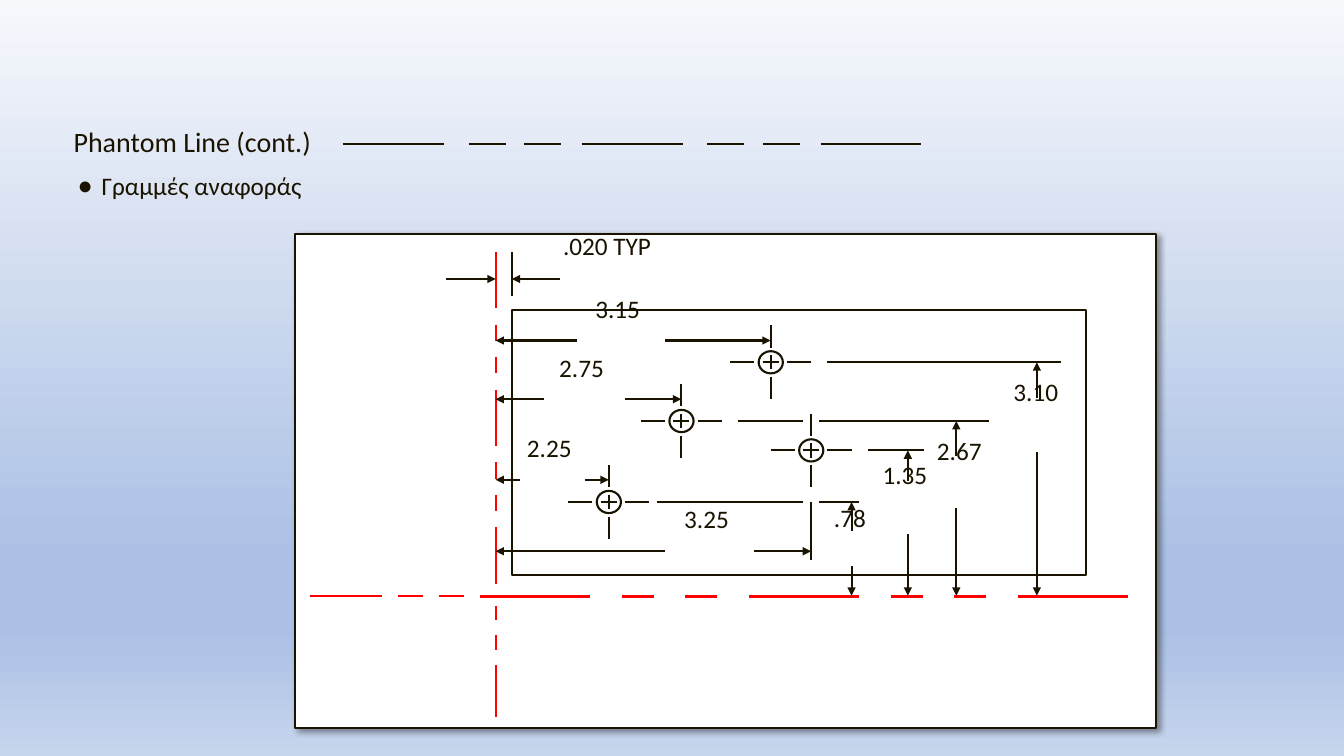
from lxml.etree import SubElement
from pptx import Presentation
from pptx.dml.color import RGBColor
from pptx.enum.shapes import MSO_CONNECTOR, MSO_SHAPE
from pptx.enum.text import MSO_ANCHOR, MSO_AUTO_SIZE, PP_ALIGN
from pptx.oxml.ns import qn
from pptx.util import Cm, Pt

INK = RGBColor(0x1A, 0x13, 0x00)
RED = RGBColor(0xFF, 0x00, 0x00)
WHITE = RGBColor(0xFF, 0xFF, 0xFF)
BLACK = RGBColor(0x00, 0x00, 0x00)
SKY = [(0, RGBColor(0xF6, 0xF8, 0xFC)), (74, RGBColor(0xAB, 0xC0, 0xE4)),
       (83, RGBColor(0xAB, 0xC0, 0xE4)), (100, RGBColor(0xC7, 0xD5, 0xED))]

FRAME = {"word_wrap": True, "auto_size": MSO_AUTO_SIZE.NONE,
         "vertical_anchor": MSO_ANCHOR.TOP}

# All boxes are left, top, width, height in centimetres on the slide.
TITLE_BOX = (1.6, 3.0, 30.63, 1.12)
BODY_BOX = (1.7, 4.24, 30.76, 13.31)
SAMPLE_BOX = (8.64, 3.63, 14.58, 0)
PANEL_BOX = (7.44, 5.89, 21.69, 12.45)

# Drawing geometry in centimetres from the panel corner.
DATUM_X, DATUM_Y = 5.05, 9.14
PART = (5.46, 1.93, 14.48, 6.68)
HOLES = [(11.98, 3.24), (9.73, 4.72), (13.0, 5.46), (7.9, 6.76)]
# y, end of left arrow's tail, start of right arrow, hole x
WIDTHS = [(2.69, 7.09, 9.32, 11.98), (4.17, 6.27, 8.31, 9.73),
          (6.2, 5.66, 7.29, 7.9), (8.0, 9.32, 11.56, 13.0)]
# x, hole y, start of upper arrow, start of lower arrow
HEIGHTS = [(18.69, 3.24, 4.14, 5.49), (16.66, 4.72, 5.59, 6.91),
           (15.44, 5.46, 6.22, 7.57), (14.02, 6.76, 7.49, 8.38)]
EXTENSIONS = [(13.41, 3.24, 19.3, 3.24), (11.15, 4.72, 12.8, 4.72),
              (13.21, 4.72, 17.48, 4.72), (14.43, 5.46, 15.85, 5.46),
              (9.12, 6.76, 12.8, 6.76), (13.21, 6.76, 14.22, 6.76),
              (13.0, 6.76, 13.0, 8.23), (5.46, 0.46, 5.46, 1.57)]
LABELS = [(".020 TYP", 6.5, -0.2, 3.33, PP_ALIGN.LEFT),
          ("3.15", 7.21, 1.37, 1.83, PP_ALIGN.CENTER),
          ("2.75", 6.3, 2.87, 1.83, PP_ALIGN.CENTER),
          ("2.25", 5.59, 4.88, 1.78, PP_ALIGN.LEFT),
          ("3.10", 17.75, 3.48, 1.83, PP_ALIGN.CENTER),
          ("2.67", 15.82, 4.95, 1.83, PP_ALIGN.CENTER),
          ("1.35", 14.45, 5.56, 1.83, PP_ALIGN.CENTER),
          ("3.25", 9.45, 6.68, 1.83, PP_ALIGN.CENTER),
          (".78", 13.23, 6.65, 1.5, PP_ALIGN.CENTER)]


def apply(target, values):
    for name, value in values.items():
        setattr(target, name, value)


def move(placeholder, box):
    apply(placeholder, dict(zip(("left", "top", "width", "height"), map(Cm, box))))


def write(frame, text, size, **paragraph_format):
    apply(frame, FRAME)
    paragraph = frame.paragraphs[0]
    paragraph.text = text
    apply(paragraph, paragraph_format)
    apply(paragraph.font, {"name": "Calibri", "size": Pt(size)})
    paragraph.font.color.rgb = INK


def add_line(shapes, origin, ends, color=INK, arrow=False):
    """Draw x1, y1, x2, y2 from the origin, with any arrowhead at the second end."""
    x, y = origin
    x1, y1, x2, y2 = ends
    stroke = shapes.add_connector(MSO_CONNECTOR.STRAIGHT, Cm(x + x1), Cm(y + y1),
                                  Cm(x + x2), Cm(y + y2))
    stroke.line.width = Pt(1.5)
    stroke.line.color.rgb = color
    if arrow:
        SubElement(stroke.line._get_or_add_ln(), qn("a:tailEnd"), type="triangle")
    SubElement(stroke.element.spPr, qn("a:effectLst"))


def add_outline(shapes, kind, box, fill=None):
    outline = shapes.add_shape(kind, *map(Cm, box))
    outline.shadow.inherit = False
    if fill is None:
        outline.fill.background()
    else:
        outline.fill.solid()
        outline.fill.fore_color.rgb = fill
    outline.line.color.rgb = INK
    outline.line.width = Pt(1.5)
    return outline


def dashes(start, lengths, gap):
    for length in lengths:
        yield start, start + length
        start += length + gap


def paint_background(slide):
    fill = slide.background.fill
    fill.gradient()
    fill.gradient_angle = 270
    stops = slide.element.find(".//" + qn("a:gsLst"))
    stops.clear()
    for percent, color in SKY:
        stop = SubElement(stops, qn("a:gs"), pos=str(percent * 1000))
        SubElement(stop, qn("a:srgbClr"), val=str(color))


def add_heading(slide, title_box, body_box):
    title, body = slide.placeholders
    move(title, title_box)
    write(title.text_frame, "Phantom Line (cont.)", 20,
          alignment=PP_ALIGN.LEFT, line_spacing=1.0)
    move(body, body_box)
    topic = body.text_frame.paragraphs[0]
    properties = topic._p.get_or_add_pPr()
    apply_indent = {"marL": str(Cm(0.61)), "indent": str(-Cm(0.61))}
    for name, value in apply_indent.items():
        properties.set(name, value)
    SubElement(properties, qn("a:buChar"), char="●")
    write(body.text_frame, "Γραμμές αναφοράς", 18, line_spacing=0.9,
          space_before=Pt(0), space_after=Pt(6))


def add_phantom_sample(shapes, box):
    period = 6.02
    pattern = [(0, 2.54), (3.17, 0.93), (4.57, 0.93)]
    strokes = [(k * period + start, length) for k in range(2) for start, length in pattern]
    for start, length in strokes + [(2 * period, 2.54)]:
        add_line(shapes, box[:2], (start, 0, start + length, 0))


def add_panel(shapes, box):
    panel = add_outline(shapes, MSO_SHAPE.RECTANGLE, box, WHITE)
    effects = panel.element.spPr.find(qn("a:effectLst"))
    shadow = SubElement(effects, qn("a:outerShdw"), blurRad=str(Pt(4)), dist=str(Pt(3)),
                        dir="2700000", algn="tl", rotWithShape="0")
    tint = SubElement(shadow, qn("a:srgbClr"), val=str(BLACK))
    SubElement(tint, qn("a:alpha"), val="40000")


def add_datums(shapes, origin):
    horizontal = [(9.12, dashes(0.36, [1.83, 0.62, 0.62], 0.41)),
                  (DATUM_Y, dashes(4.65, [2.78, 0.8, 0.8] * 2 + [2.78], 0.8))]
    for y, strokes in horizontal:
        for start, end in strokes:
            add_line(shapes, origin, (start, y, end, y), RED)
    vertical = [dashes(0.46, [1.42, 0.41, 0.41] * 2 + [1.42], 0.41),
                dashes(9.37, [0.37, 0.37, 1.3], 0.38)]
    for strokes in vertical:
        for start, end in strokes:
            add_line(shapes, origin, (DATUM_X, start, DATUM_X, end), RED)


def add_hole(shapes, origin, center):
    x, y = origin[0] + center[0], origin[1] + center[1]
    add_outline(shapes, MSO_SHAPE.OVAL, (x - 0.3, y - 0.28, 0.61, 0.56))
    for start, end in [(-1.02, -0.41), (-0.2, 0.2), (0.41, 1.02)]:
        add_line(shapes, (x, y), (start, 0, end, 0))
    for start, end in [(-0.93, -0.37), (-0.18, 0.18), (0.37, 0.93)]:
        add_line(shapes, (x, y), (0, start, 0, end))


def add_dimensions(shapes, origin):
    arrows = [(3.81, 1.14, DATUM_X, 1.14), (6.68, 1.14, PART[0], 1.14)]
    for y, left_tail, right_tail, hole_x in WIDTHS:
        arrows += [(left_tail, y, DATUM_X, y), (right_tail, y, hole_x, y)]
    for x, hole_y, upper_tail, lower_tail in HEIGHTS:
        arrows += [(x, upper_tail, x, hole_y), (x, lower_tail, x, DATUM_Y - 0.02)]
    for ends in arrows:
        add_line(shapes, origin, ends, arrow=True)
    for ends in EXTENSIONS:
        add_line(shapes, origin, ends)


def add_labels(shapes, origin):
    for text, x, y, width, alignment in LABELS:
        label = shapes.add_textbox(Cm(origin[0] + x), Cm(origin[1] + y), Cm(width), Cm(1.02))
        write(label.text_frame, text, 18, alignment=alignment)


def add_drawing(slide, box):
    origin = box[:2]
    parts = slide.shapes.add_group_shape().shapes
    add_panel(parts, box)
    add_datums(parts, origin)
    add_outline(parts, MSO_SHAPE.RECTANGLE,
                (origin[0] + PART[0], origin[1] + PART[1], *PART[2:]))
    for center in HOLES:
        add_hole(parts, origin, center)
    add_dimensions(parts, origin)
    add_labels(slide.shapes, origin)


def main():
    deck = Presentation()
    deck.slide_width, deck.slide_height = Cm(33.87), Cm(19.05)
    slide = deck.slides.add_slide(deck.slide_layouts[1])
    paint_background(slide)
    add_heading(slide, TITLE_BOX, BODY_BOX)
    add_drawing(slide, PANEL_BOX)
    add_phantom_sample(slide.shapes, SAMPLE_BOX)
    deck.save("out.pptx")


if __name__ == "__main__":
    main()
